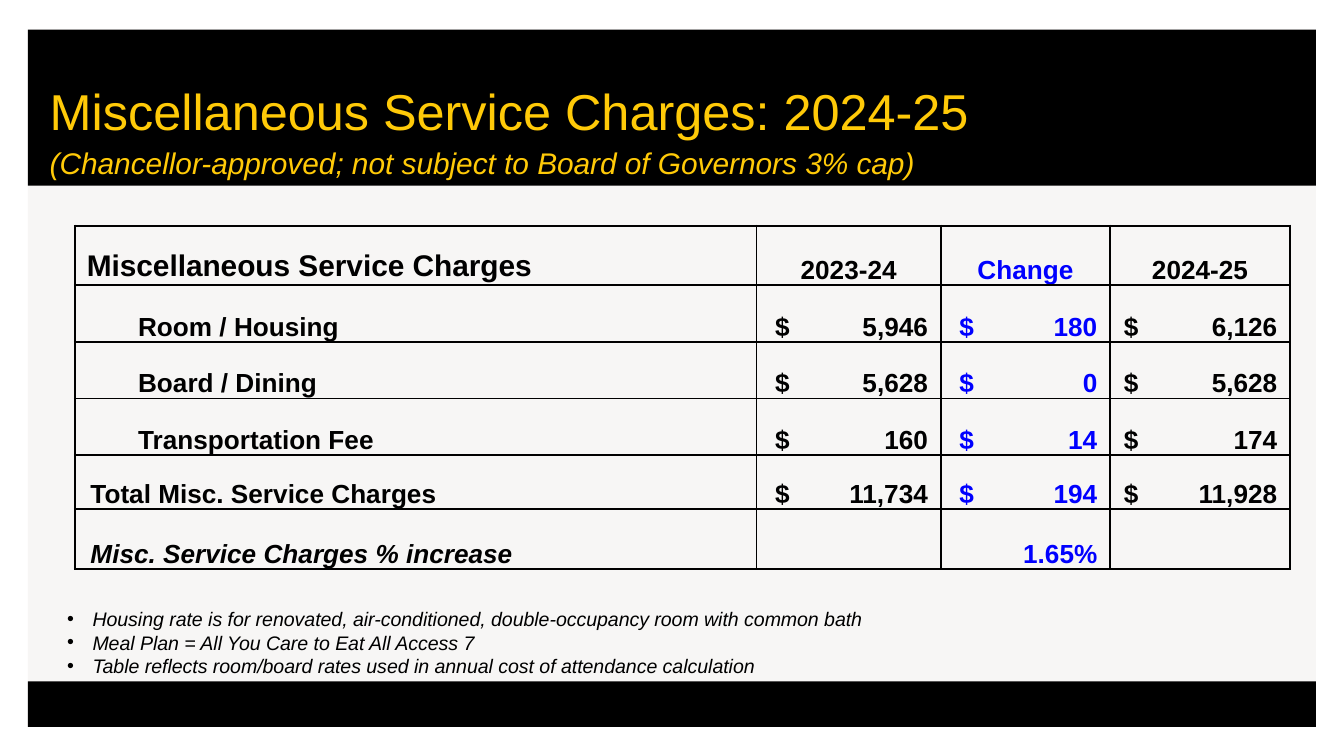
from lxml.etree import SubElement
from pptx import Presentation
from pptx.dml.color import RGBColor
from pptx.enum.shapes import MSO_SHAPE
from pptx.enum.text import MSO_ANCHOR, PP_ALIGN
from pptx.oxml.ns import qn
from pptx.util import Cm, Pt

FONT = "Arial"
BLACK, BLUE, GOLD, SAND = "000000", "0000FF", "FFCA08", "D0C6C0"
COLUMN_WIDTHS = [12.88, 3.48, 3.2, 3.4]
ROW_HEIGHTS = [1.12, 1.07, 1.07, 1.07, 1.02, 1.14]
DOLLAR_INDENTS = [0, 0.35, 0.35, 0.26]
NUMBER_MARGIN = 0.24

CHARGES = [
    ["Miscellaneous Service Charges", "2023-24", "Change", "2024-25"],
    ["Room / Housing", "$\t5,946", "$\t180", "$\t6,126"],
    ["Board / Dining", "$\t5,628", "$\t0", "$\t5,628"],
    ["Transportation Fee", "$\t160", "$\t14", "$\t174"],
    ["Total Misc. Service Charges", "$\t11,734", "$\t194", "$\t11,928"],
    ["Misc. Service Charges % increase", "", "1.65%", ""],
]
NOTES = [
    "Housing rate is for renovated, air-conditioned, double-occupancy room with common bath",
    "Meal Plan = All You Care to Eat All Access 7",
    "Table reflects room/board rates used in annual cost of attendance calculation",
]


def color(hex_string):
    return RGBColor.from_string(hex_string)


def format_run(run, size, hex_string, bold=False, italic=False):
    run.font.name = FONT
    run.font.size = Pt(size)
    run.font.bold = bold
    run.font.italic = italic
    run.font.color.rgb = color(hex_string)


def add_band(slide, top, height, hex_string, opacity=100):
    shape = slide.shapes.add_shape(
        MSO_SHAPE.RECTANGLE, Cm(0.53), Cm(top), Cm(24.34), Cm(height))
    shape.shadow.inherit = False
    shape.fill.solid()
    shape.fill.fore_color.rgb = color(hex_string)
    shape.line.fill.background()
    if opacity < 100:
        fill_color = shape.element.spPr.find(".//" + qn("a:srgbClr"))
        SubElement(fill_color, qn("a:alpha"), val=str(opacity * 1000))


def add_text_frame(slide, left, top, width, height):
    shape = slide.shapes.add_textbox(Cm(left), Cm(top), Cm(width), Cm(height))
    shape.text_frame.word_wrap = True
    return shape.text_frame


def add_title(slide):
    text_frame = add_text_frame(slide, 0.69, 0, 22.96, 3.53)
    text_frame.vertical_anchor = MSO_ANCHOR.BOTTOM
    text_frame.text = ""
    paragraph = text_frame.paragraphs[0]
    paragraph.text = ("Miscellaneous Service Charges: 2024-25\v"
                      "(Chancellor-approved; not subject to Board of Governors 3% cap)")
    paragraph.line_spacing = 1.1
    heading, subheading = paragraph.runs
    format_run(heading, 27, GOLD)
    format_run(subheading, 16, GOLD, italic=True)


def set_borders(cell, row, column):
    outer_edges = {
        "a:lnL": column == 0,
        "a:lnR": column == len(COLUMN_WIDTHS) - 1,
        "a:lnT": row == 0,
        "a:lnB": row == len(ROW_HEIGHTS) - 1,
    }
    properties = cell._tc.get_or_add_tcPr()
    for index, (tag, is_outer) in enumerate(outer_edges.items()):
        line = SubElement(properties, qn(tag), w=str(Pt(1.5 if is_outer else 1)))
        SubElement(SubElement(line, qn("a:solidFill")), qn("a:srgbClr"), val=BLACK)
        properties.insert(index, line)  # borders come before the fill


def add_right_tab(paragraph, position):
    tabs = SubElement(paragraph._p.get_or_add_pPr(), qn("a:tabLst"))
    SubElement(tabs, qn("a:tab"), pos=str(Cm(position)), algn="r")


def label_indent(row):
    if row == 0:
        return 0.22
    return 1.19 if row <= 3 else 0.29


def fill_cell(cell, row, column, text):
    cell.fill.background()
    set_borders(cell, row, column)
    cell.vertical_anchor = MSO_ANCHOR.BOTTOM
    cell.margin_left = cell.margin_right = cell.margin_top = Cm(0.03)
    cell.margin_bottom = Cm(0)
    paragraph = cell.text_frame.paragraphs[0]
    paragraph.text = text
    if column == 0:
        cell.margin_left = Cm(label_indent(row))
        if row == 0:
            cell.margin_bottom = Cm(0.04)
    elif row == 0:
        paragraph.alignment = PP_ALIGN.CENTER
    elif "\t" in text:
        # Dollar sign at the left, amount against a right tab
        indent = DOLLAR_INDENTS[column]
        cell.margin_left = Cm(indent)
        add_right_tab(paragraph, COLUMN_WIDTHS[column] - indent - NUMBER_MARGIN)
    else:
        cell.margin_right = Cm(NUMBER_MARGIN)
        paragraph.alignment = PP_ALIGN.RIGHT
    for run in paragraph.runs:
        format_run(run, 16 if row == column == 0 else 14,
                   BLUE if column == 2 else BLACK, bold=True,
                   italic=column == 0 and row == len(ROW_HEIGHTS) - 1)


def add_charges_table(slide):
    table = slide.shapes.add_table(
        len(ROW_HEIGHTS), len(COLUMN_WIDTHS), Cm(1.42), Cm(4.27),
        Cm(sum(COLUMN_WIDTHS)), Cm(sum(ROW_HEIGHTS))).table
    table.first_row = table.horz_banding = False
    for column, width in zip(table.columns, COLUMN_WIDTHS):
        column.width = Cm(width)
    for row, height in zip(table.rows, ROW_HEIGHTS):
        row.height = Cm(height)
    for row, texts in enumerate(CHARGES):
        for column, text in enumerate(texts):
            fill_cell(table.cell(row, column), row, column, text)


def add_notes(slide):
    text_frame = add_text_frame(slide, 1.02, 11.35, 16.94, 1.6)
    text_frame.text = "\n".join(NOTES)
    for paragraph in text_frame.paragraphs:
        properties = paragraph._p.get_or_add_pPr()
        properties.set("marL", str(Cm(0.48)))
        properties.set("indent", str(Cm(-0.48)))
        SubElement(properties, qn("a:buFont"), typeface=FONT)
        SubElement(properties, qn("a:buChar"), char="•")
        format_run(paragraph.runs[0], 10.5, BLACK, italic=True)


def main():
    presentation = Presentation()
    presentation.slide_width, presentation.slide_height = Cm(25.4), Cm(14.29)
    slide = presentation.slides.add_slide(presentation.slide_layouts[6])

    # Background panel, footer and header
    add_band(slide, 0.56, 13.18, SAND, opacity=15)
    add_band(slide, 12.88, 0.86, BLACK)
    add_band(slide, 0.56, 2.95, BLACK)

    # Content
    add_title(slide)
    add_charges_table(slide)
    add_notes(slide)
    presentation.save("out.pptx")


if __name__ == "__main__":
    main()
